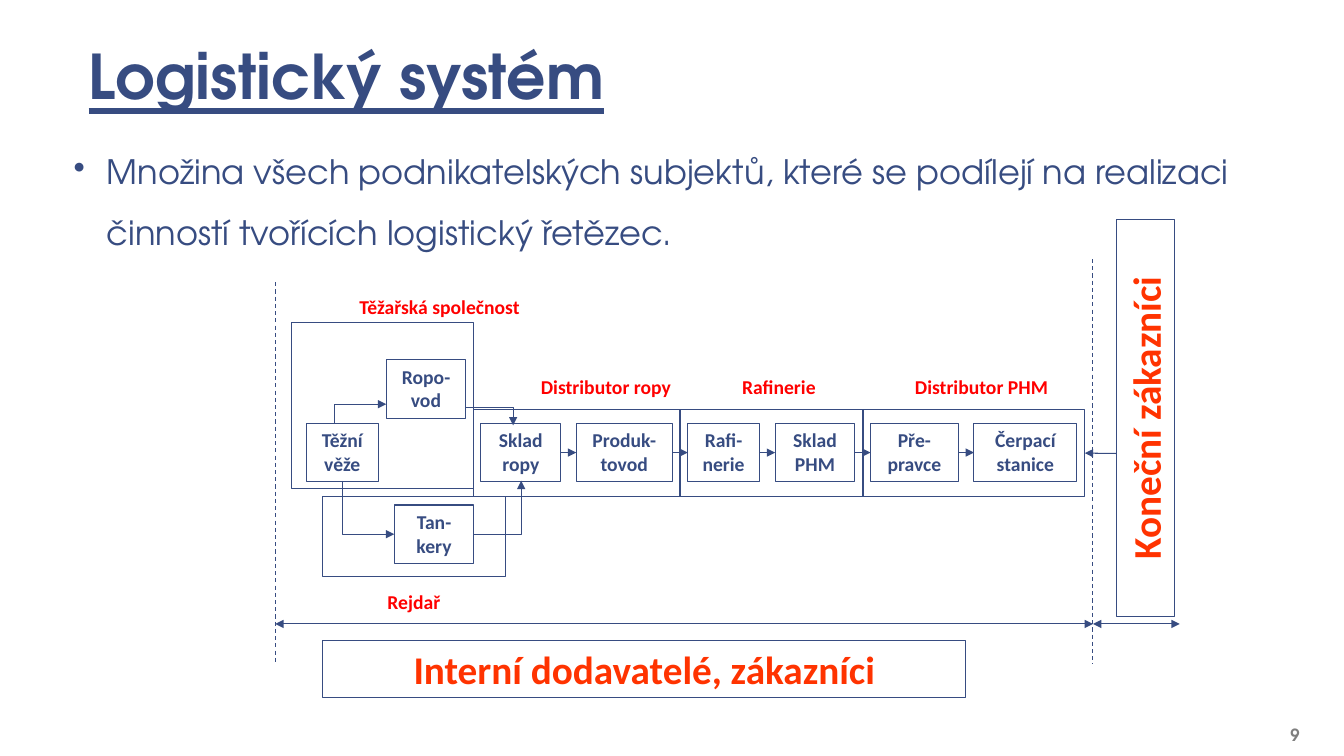
import pptx
import pptx.util
import pptx.dml.color
import pptx.enum.dml
import pptx.enum.shapes
import pptx.enum.text
import pptx.oxml
import pptx.oxml.ns
from pptx.util import Inches

# Content
TITLE = "Logistický systém"
BODY = ("Množina všech podnikatelských subjektů, které se podílejí na realizaci "
        "činností tvořících logistický řetězec.")
NUMBER = "9"
SOURCES = [  # text, left, top, width
    ("Těžní věže", 3.04, 4.2, 0.71),
    ("Ropo-vod", 3.83, 3.57, 0.79),
    ("Tan-kery", 3.91, 5.01, 0.79),
]
CHAIN = [("Sklad ropy", 0.79), ("Produk-tovod", 0.95), ("Rafi-nerie", 0.71),
         ("Sklad PHM", 0.79), ("Pře-pravce", 0.87), ("Čerpací stanice", 1.02)]
FIRMS = [  # text, label (left, top, width), frame (left, top, width, height)
    ("Těžařská společnost", (2.89, 2.88, 2.94), (2.89, 3.2, 1.81, 1.65)),
    ("Rejdař", (3.2, 5.8, 1.81), (3.2, 4.93, 1.81, 0.79)),
    ("Distributor ropy", (4.85, 3.67, 2.32), (4.7, 4.06, 2.05, 0.87)),
    ("Rafinerie", (6.9, 3.67, 1.65), (6.74, 4.06, 1.81, 0.87)),
    ("Distributor PHM", (8.71, 3.67, 2.05), (8.56, 4.06, 2.2, 0.87)),
]
BENDS = [  # from, to, first leg vertical
    ((3.32, 4.2), (3.83, 4.01), True),
    ((3.4, 4.77), (3.91, 5.3), True),
    ((4.62, 4.04), (5.09, 4.22), False),
    ((4.7, 5.3), (5.17, 4.77), False),
]
BANNERS = [  # text, box, rotation
    ("Interní dodavatelé, zákazníci", (3.2, 6.35, 6.38, 0.57), 0),
    ("Koneční zákazníci", (9.39, 3.86, 3.94, 0.57), 270),
]
CHAIN_LEFT, CHAIN_RIGHT, CHAIN_TOP, BOX_H = 4.77, 10.68, 4.2, 0.58
EDGE_L, EDGE_R, END, SPAN_Y, BASE = 2.73, 10.84, 11.7, 6.19, 6.59

THEME = dict(navy="374C81", red="FF0000", orange="FF3300", gray="7F7F7F",
             white="FFFFFF", head="TeX Gyre Adventor", sans="Calibri",
             title=44, body=24, banner=28, small=14, num=12, line=0.75)

ALIGN = pptx.enum.text.PP_ALIGN
ANCHOR = pptx.enum.text.MSO_ANCHOR
KIND = pptx.enum.shapes.MSO_CONNECTOR
qn = pptx.oxml.ns.qn

deck = pptx.Presentation()
deck.slide_width, deck.slide_height = Inches(13.33), Inches(7.5)
slide = deck.slides.add_slide(deck.slide_layouts[6])
shapes = slide.shapes


def color(name):
    return pptx.dml.color.RGBColor.from_string(THEME[name])


def node(tag, attrs=""):
    return pptx.oxml.parse_xml(f"<a:{tag} {pptx.oxml.ns.nsdecls('a')} {attrs}/>")


def write(shape, text, size="small", font="sans", ink="navy", bold=True,
          line=False, align=ALIGN.CENTER, anchor=ANCHOR.TOP,
          inset=(0.1, 0.05), lead=None, bullet=None):
    frame = shape.text_frame
    frame.word_wrap = True
    frame.vertical_anchor = anchor
    frame.margin_left = frame.margin_right = Inches(inset[0])
    frame.margin_top = frame.margin_bottom = Inches(inset[1])
    para = frame.paragraphs[0]
    para.alignment = align
    if lead:
        para.line_spacing = lead
    if bullet:
        props = para._p.get_or_add_pPr()
        props.set("marL", str(Inches(0.33)))
        props.set("indent", str(-Inches(0.33)))
        props.append(node("buChar", f'char="{bullet}"'))
    run = para.add_run()
    run.text = text
    face = run.font
    face.name, face.size = THEME[font], pptx.util.Pt(THEME[size])
    face.bold, face.underline = bold, line
    face.color.rgb = color(ink)


def label(text, box, **form):
    write(shapes.add_textbox(*map(Inches, box)), text, **form)


def rect(box, fill=True):
    shape = shapes.add_shape(pptx.enum.shapes.MSO_SHAPE.RECTANGLE, *map(Inches, box))
    shape.shadow.inherit = False
    if fill:
        shape.fill.solid()
        shape.fill.fore_color.rgb = color("white")
    else:
        shape.fill.background()
    shape.line.color.rgb = color("navy")
    shape.line.width = pptx.util.Pt(THEME["line"])
    return shape


def link(start, stop, kind=KIND.STRAIGHT, heads=("tailEnd",), dash=False):
    wire = shapes.add_connector(kind, *map(Inches, (*start, *stop)))
    wire.line.color.rgb = color("navy")
    wire.line.width = pptx.util.Pt(THEME["line"])
    if dash:
        wire.line.dash_style = pptx.enum.dml.MSO_LINE.DASH
    props = wire._element.spPr
    for head in heads:
        props.find(qn("a:ln")).append(node(head, 'type="triangle"'))
    props.append(node("effectLst"))
    return wire


def bend(start, stop, rise):
    (x1, y1), (x2, y2) = start, stop
    if rise:  # a quarter turn about the centre makes the first leg vertical
        mid_x, mid_y = (x1 + x2) / 2, (y1 + y2) / 2
        half_w, half_h = (y1 - y2) / 2, (x2 - x1) / 2
        start = mid_x - half_w, mid_y - half_h
        stop = mid_x + half_w, mid_y + half_h
    wire = link(start, stop, kind=KIND.ELBOW)
    props = wire._element.spPr
    props.find(qn("a:prstGeom")).set("prst", "bentConnector2")
    if rise:
        props.find(qn("a:xfrm")).set("rot", str(270 * 60000))


# Heading, text and page number
wide = dict(font="head", inset=(0.13, 0.07))
label(TITLE, (0.75, -0.35, 11.11, 1.53), size="title", line=True, lead=0.85,
      align=ALIGN.LEFT, anchor=ANCHOR.BOTTOM, **wide)
label(BODY, (0.6, 1.23, 12.13, 1.35), size="body", bold=False, lead=1.5,
      align=ALIGN.LEFT, bullet="•", **wide)
label(NUMBER, (11.81, 7.11, 1.21, 0.35), size="num", ink="gray",
      align=ALIGN.RIGHT, anchor=ANCHOR.BOTTOM, **wide)

# Oil sources
for text, left, top, width in SOURCES:
    write(rect((left, top, width, BOX_H)), text)

# Main chain, evenly spaced
gap = (CHAIN_RIGHT - CHAIN_LEFT - sum(w for _, w in CHAIN)) / (len(CHAIN) - 1)
steps, left = [], CHAIN_LEFT
for text, width in CHAIN:
    step = rect((left, CHAIN_TOP, width, BOX_H))
    write(step, text)
    steps.append(step)
    left += width + gap

# Arrows
for start, stop, rise in BENDS:
    bend(start, stop, rise)
for one, two in zip(steps, steps[1:]):
    wire = link((0, 0), (1, 1))
    wire.begin_connect(one, 3)
    wire.end_connect(two, 1)

# Firms: frames and labels
for text, spot, box in FIRMS:
    firm = rect(box, fill=False)
    label(text, (*spot, 0.34), ink="red")

# Boundaries and spans
for x, top in ((EDGE_L, 2.8), (EDGE_R, 2.57)):
    link((x, top), (x, BASE), heads=(), dash=True)
for x1, x2 in ((EDGE_L, EDGE_R), (EDGE_R, END)):
    link((x1, SPAN_Y), (x2, SPAN_Y), heads=("headEnd", "tailEnd"))

# Customers
link((11.16, 4.5), (10.76, 4.5)).end_connect(firm, 3)
for text, box, turn in BANNERS:
    banner = rect(box)
    banner.rotation = turn
    write(banner, text, size="banner", ink="orange")

deck.save("out.pptx")
